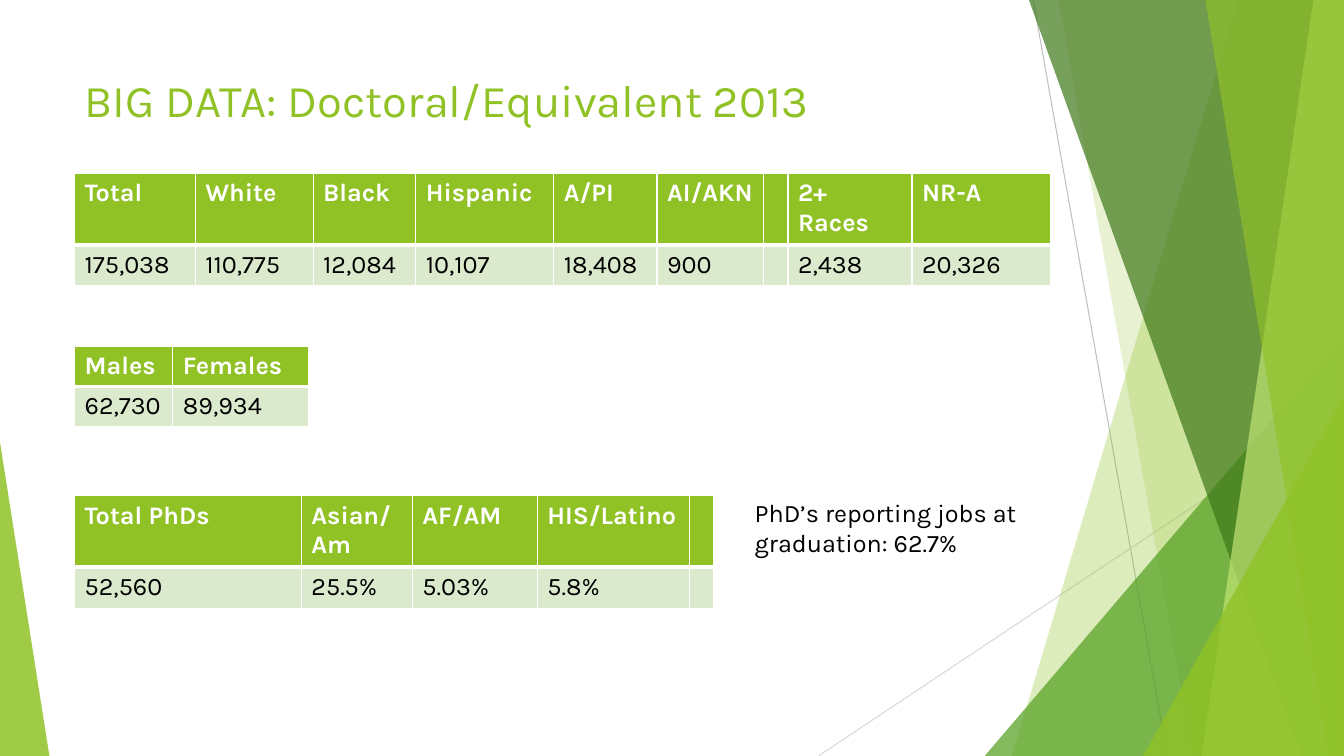
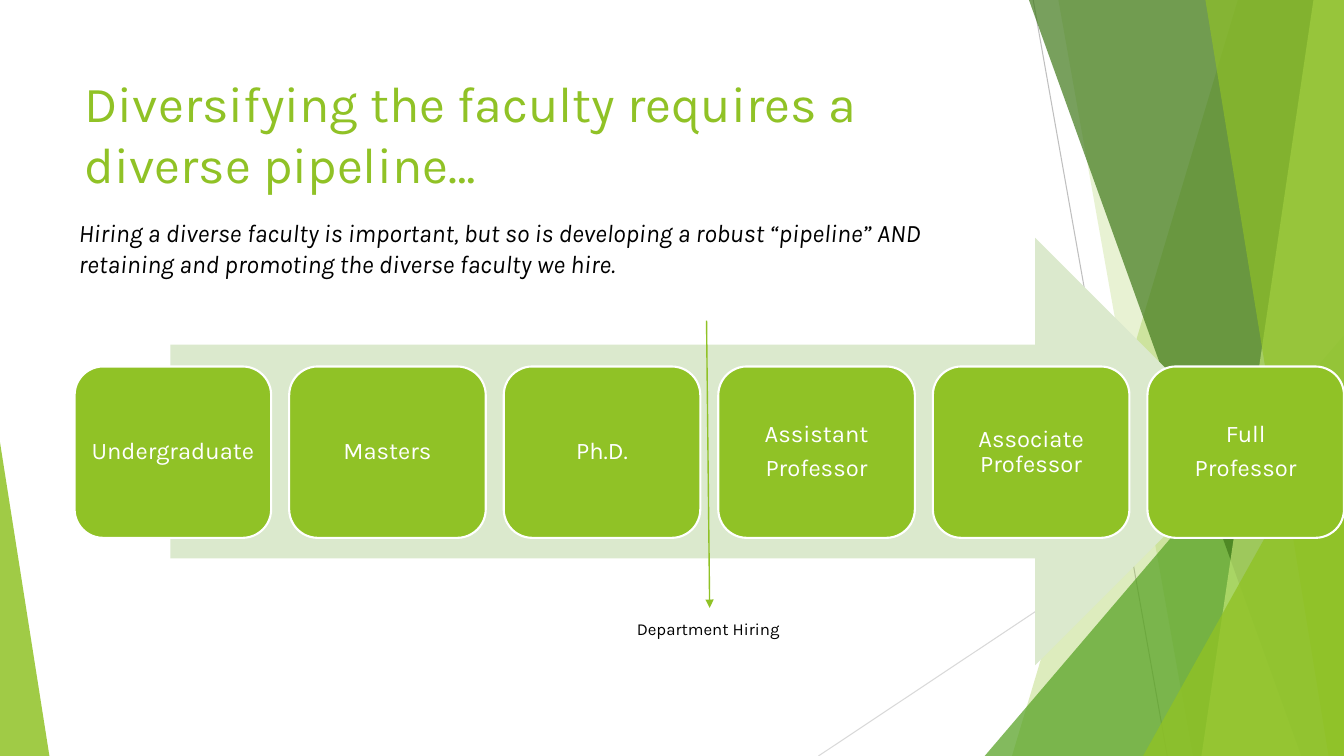
from lxml import etree
from pptx import Presentation
from pptx.dml.color import RGBColor
from pptx.enum.shapes import MSO_CONNECTOR, MSO_SHAPE
from pptx.enum.text import MSO_ANCHOR, MSO_AUTO_SIZE, PP_ALIGN
from pptx.oxml.ns import qn
from pptx.util import Pt

STRAIGHT = MSO_CONNECTOR.STRAIGHT
TRIANGLE = MSO_SHAPE.ISOSCELES_TRIANGLE
ROUNDED = MSO_SHAPE.ROUNDED_RECTANGLE
RIGHT_ARROW = MSO_SHAPE.RIGHT_ARROW
TOP = MSO_ANCHOR.TOP
MIDDLE = MSO_ANCHOR.MIDDLE
LEFT = PP_ALIGN.LEFT
CENTER = PP_ALIGN.CENTER
NO_FIT = MSO_AUTO_SIZE.NONE

FONT = "Karla"
GREEN = "90C226"
MID_GREEN = "54A021"
DARK_GREEN = "3F7819"
LIME = "C0E474"
PALE = "DBE9CD"
WHITE = "FFFFFF"
BLACK = "000000"
WIDTH, HEIGHT = 960, 540
MARGIN = 53.3
TITLE_ONLY = 5


def color(value):
    return RGBColor.from_string(value)


class Designer:
    def __init__(self):
        self.deck = Presentation()
        self.deck.slide_width = Pt(WIDTH)
        self.deck.slide_height = Pt(HEIGHT)
        self.page = None

    def add_page(self, title, size, height):
        self.page = self.deck.slides.add_slide(self.deck.slide_layouts[TITLE_ONLY])
        self.backdrop()
        box = self.page.shapes.title
        box.left, box.top, box.width, box.height = Pt(MARGIN), Pt(48.2), Pt(676.8), Pt(height)
        frame = box.text_frame
        frame.auto_size = NO_FIT
        frame.vertical_anchor = TOP
        frame.text = title
        self.format(frame.paragraphs[0], size, GREEN)

    def backdrop(self):
        self.line((738, 0), (833.8, HEIGHT), "BFBFBF", 0.75)
        self.line((WIDTH, 290.2), (584.6, HEIGHT), "D9D9D9", 0.75)
        self.wedge(884.2, 722.9, GREEN, 30)
        self.wedge(756, 852, GREEN, 20)
        self.corner(703.4, 256.3, 300.2, 1, MID_GREEN, 72)
        self.wedge(735, 929.5, DARK_GREEN, 70)
        self.wedge(938.2, 858.2, LIME, 70)
        self.wedge(861, 949, GREEN, 65)
        self.corner(816.5, 143.5, 257, 1, GREEN, 80)
        self.corner(0, 35.3, 224, 0, GREEN, 85)

    def wedge(self, top_x, bottom_x, fill, opacity):
        builder = self.page.shapes.build_freeform(Pt(top_x), Pt(0))
        corners = [(WIDTH, 0), (WIDTH, HEIGHT), (bottom_x, HEIGHT)]
        builder.add_line_segments([(Pt(x), Pt(y)) for x, y in corners])
        self.paint(builder.convert_to_shape(), fill, opacity=opacity)

    def corner(self, left, width, height, apex, fill, opacity):
        shape = self.shape(TRIANGLE, left, HEIGHT - height, width, height, fill, opacity=opacity)
        shape.adjustments[0] = apex

    def shape(self, kind, left, top, width, height, fill, outline=None, opacity=100):
        shape = self.page.shapes.add_shape(kind, Pt(left), Pt(top), Pt(width), Pt(height))
        self.paint(shape, fill, outline, opacity)
        return shape

    def paint(self, shape, fill, outline=None, opacity=100):
        shape.shadow.inherit = False
        shape.fill.solid()
        shape.fill.fore_color.rgb = color(fill)
        if opacity < 100:
            tone = shape._element.spPr.find(qn("a:solidFill")).find(qn("a:srgbClr"))
            etree.SubElement(tone, qn("a:alpha"), val=str(opacity * 1000))
        if outline:
            shape.line.color.rgb = color(outline)
            shape.line.width = Pt(1.5)
        else:
            shape.line.fill.background()

    def line(self, start, end, tone, width, arrow=False):
        points = [Pt(value) for value in start + end]
        connector = self.page.shapes.add_connector(STRAIGHT, *points)
        connector.line.color.rgb = color(tone)
        connector.line.width = Pt(width)
        properties = connector._element.spPr
        if arrow:
            etree.SubElement(properties.find(qn("a:ln")), qn("a:tailEnd"), type="triangle")
        etree.SubElement(properties, qn("a:effectLst"))

    def format(self, paragraph, size, tone, bold=False, italic=False, align=LEFT):
        paragraph.alignment = align
        font = paragraph.font
        font.name, font.size, font.bold, font.italic = FONT, Pt(size), bold, italic
        font.color.rgb = color(tone)

    def note(self, text, left, top, width, height, size=18, italic=False):
        box = self.page.shapes.add_textbox(Pt(left), Pt(top), Pt(width), Pt(height))
        frame = box.text_frame
        frame.word_wrap = True
        frame.text = text
        self.format(frame.paragraphs[0], size, BLACK, italic=italic)

    def stage(self, text, left, top, width, height):
        shape = self.shape(ROUNDED, left, top, width, height, GREEN, WHITE)
        frame = shape.text_frame
        frame.word_wrap = True
        frame.vertical_anchor = MIDDLE
        frame.margin_left = frame.margin_right = Pt(3)
        frame.text = text
        for paragraph in frame.paragraphs:
            self.format(paragraph, 17, WHITE, align=CENTER)
            paragraph.line_spacing = 0.9
            paragraph.space_after = Pt(6)

    def table(self, top, widths, heights, rows):
        frame = self.page.shapes.add_table(
            len(rows), len(widths), Pt(MARGIN), Pt(top), Pt(sum(widths)), Pt(sum(heights)))
        table = frame.table
        table.horz_banding = False
        for column, width in zip(table.columns, widths):
            column.width = Pt(width)
        for index, (row, height, texts) in enumerate(zip(table.rows, heights, rows)):
            row.height = Pt(height)
            header = index == 0
            for cell, text in zip(row.cells, texts):
                cell.text = text
                self.format(cell.text_frame.paragraphs[0], 18, WHITE if header else BLACK, bold=header)
                self.borders(cell, "lnB" if header else "lnT")
                cell.fill.solid()
                cell.fill.fore_color.rgb = color(GREEN if header else PALE)

    def borders(self, cell, thick_side):
        properties = cell._tc.get_or_add_tcPr()
        for side in ("lnL", "lnR", "lnT", "lnB"):
            width = Pt(3 if side == thick_side else 1)
            border = etree.SubElement(properties, qn(f"a:{side}"), w=str(width))
            fill = etree.SubElement(border, qn("a:solidFill"))
            etree.SubElement(fill, qn("a:srgbClr"), val=WHITE)


def add_data_page(design):
    design.add_page("BIG DATA: Doctoral/Equivalent 2013", 32.4, 49)
    design.table(124, [86.2, 84.2, 73.3, 98.6, 73.8, 76.3, 16.8, 88.6, 99.4], [51, 29], [
        ["Total", "White", "Black", "Hispanic", "A/PI", "AI/AKN", "", "2+ Races", "NR-A"],
        ["175,038", "110,775", "12,084", "10,107", "18,408", "900", "", "2,438", "20,326"],
    ])
    design.table(247.7, [70.2, 96.8], [28, 29], [["Males", "Females"], ["62,730", "89,934"]])
    design.table(354.2, [162, 79.2, 89.3, 108.7, 16.8], [51, 29.5], [
        ["Total PhDs", "Asian/Am", "AF/AM", "HIS/Latino", ""],
        ["52,560", "25.5%", "5.03%", "5.8%", ""],
    ])
    design.note("PhD’s reporting jobs at graduation: 62.7%", 532, 351.4, 212.4, 51)


def add_pipeline_page(design):
    design.add_page("Diversifying the faculty requires a diverse pipeline…", 36, 103.7)
    design.shape(RIGHT_ARROW, 121.7, 169.9, 770.4, 305.3, PALE)
    stages = ["Undergraduate", "Masters", "Ph.D.", "Assistant\nProfessor",
              "Associate Professor", "Full\nProfessor"]
    width = 140.4
    step = (WIDTH - MARGIN - width) / (len(stages) - 1)
    for index, text in enumerate(stages):
        design.stage(text, MARGIN + index * step, 261.8, width, 122.4)
    design.note("Hiring a diverse faculty is important, but so is developing a robust “pipeline” AND "
                "retaining and promoting the diverse faculty we hire.",
                49, 152, 685.4, 51, italic=True)
    design.line((504.7, 229), (506.9, 434.2), GREEN, 1, arrow=True)
    design.note("Department Hiring", 447.8, 438.5, 136.8, 21.6, size=12)


def main():
    design = Designer()
    add_data_page(design)
    add_pipeline_page(design)
    design.deck.save("out.pptx")


if __name__ == "__main__":
    main()
